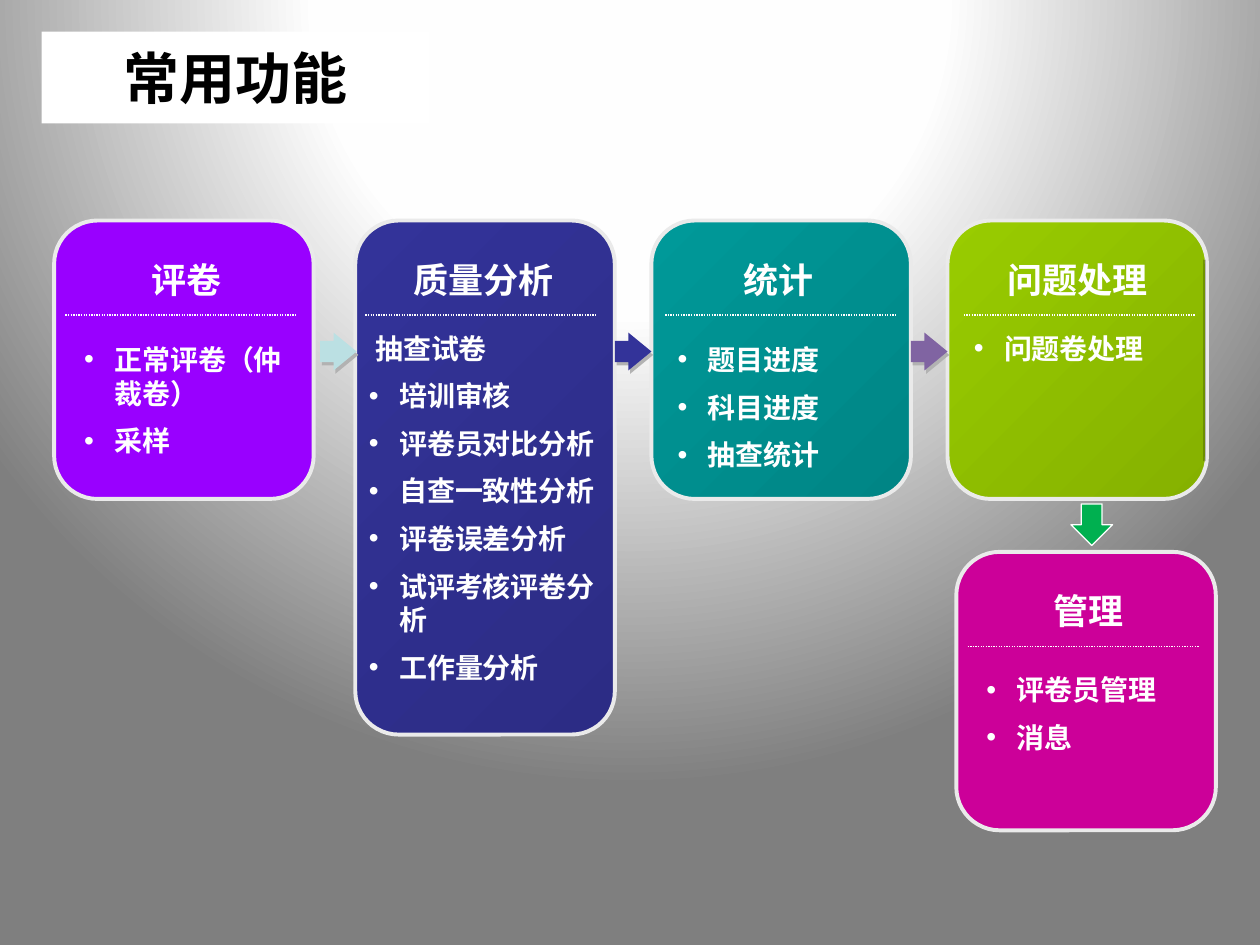
from dataclasses import dataclass

from lxml import etree
from pptx import Presentation
from pptx.dml.color import RGBColor
from pptx.enum import dml, shapes, text
from pptx.oxml import ns
from pptx.util import Inches, Pt

FONT = "Noto Sans CJK SC"
WHITE = RGBColor(0xFF, 0xFF, 0xFF)
BLACK = RGBColor(0, 0, 0)
BORDER = RGBColor(0xEA, 0xEA, 0xEA)
EDGE = RGBColor(0x08, 0x08, 0x08)
VIOLET = RGBColor(0x99, 0x00, 0xFF)
INDIGO = RGBColor(0x33, 0x33, 0x99)
TEAL = RGBColor(0x00, 0x99, 0x99)
LIME = RGBColor(0x99, 0xCC, 0x00)
MAGENTA = RGBColor(0xCC, 0x00, 0x99)
PALE_BLUE = RGBColor(0xBB, 0xE0, 0xE3)
PURPLE = RGBColor(0x80, 0x64, 0xA2)
GREEN = RGBColor(0x00, 0xB0, 0x50)

CARD_WIDTH = 2.06
RULE_WIDTH = 1.84
INDENT = 0.24


@dataclass(frozen=True)
class Card:
    heading: str
    items: tuple[str, ...]
    color: RGBColor
    left: float
    heading_left: float
    rule_left: float
    list_left: float
    list_drop: float = 0.92
    list_width: float = 1.82
    list_height: float = 1.04
    top: float = 1.75
    height: float = 2.21
    shaded: bool = True
    lead: str = ""


@dataclass(frozen=True)
class Step:
    left: float
    color: RGBColor


CARDS = (
    Card("评卷", ("正常评卷（仲裁卷）", "采样"), VIOLET,
         0.43, 0.45, 0.52, 0.57, shaded=False),
    Card("质量分析",
         ("培训审核", "评卷员对比分析", "自查一致性分析", "评卷误差分析",
          "试评考核评卷分析", "工作量分析"), INDIGO,
         2.82, 2.81, 2.90, 2.83, list_drop=0.83, list_width=2.09,
         list_height=2.79, height=4.08, lead="抽查试卷"),
    Card("统计", ("题目进度", "科目进度", "抽查统计"), TEAL,
         5.17, 5.15, 5.28, 5.28, list_height=1.18),
    Card("问题处理", ("问题卷处理",), LIME,
         7.52, 7.52, 7.65, 7.63, list_drop=0.83, list_height=0.37),
    Card("管理", ("评卷员管理", "消息"), MAGENTA,
         7.59, 7.61, 7.68, 7.73, list_drop=0.91, list_height=0.77,
         top=4.38, shaded=False),
)
STEPS = (Step(2.54, PALE_BLUE), Step(4.88, INDIGO), Step(7.23, PURPLE))


def add_xml(parent, tag: str, **attributes):
    return etree.SubElement(parent, ns.qn(tag), attributes)


def paint_background(slide) -> None:
    """Light falling from above the slide, fading to grey."""
    fill = slide.background.fill
    fill.gradient()
    gradient = slide.element.find(".//" + ns.qn("a:gradFill"))
    for child in list(gradient):
        gradient.remove(child)
    stops = add_xml(gradient, "a:gsLst")
    for position, color in ((0, "FFFFFF"), (40, "FEFEFE"), (100, "7F7F7F")):
        stop = add_xml(stops, "a:gs", pos=str(position * 1000))
        add_xml(stop, "a:srgbClr", val=color)
    circle = add_xml(gradient, "a:path", path="circle")
    add_xml(circle, "a:fillToRect", l="50000", t="-80000", r="50000", b="180000")


def shade_diagonally(shape, color: RGBColor) -> None:
    shape.fill.gradient()
    shape.fill.gradient_angle = 315
    for stop, position in zip(shape.fill.gradient_stops, (0, 1)):
        stop.color.rgb = color
        stop.position = position
    last = shape._element.spPr.findall(".//" + ns.qn("a:srgbClr"))[-1]
    add_xml(last, "a:shade", val="72549")


def add_filled(slide, kind, left: float, top: float, width: float,
               height: float, color: RGBColor):
    shape = slide.shapes.add_shape(
        kind, Inches(left), Inches(top), Inches(width), Inches(height))
    shape.shadow.inherit = False
    shape.fill.solid()
    shape.fill.fore_color.rgb = color
    shape.line.fill.background()
    return shape


def add_line(slide, start: tuple[float, float], end: tuple[float, float],
             color: RGBColor, width: float):
    line = slide.shapes.add_connector(
        shapes.MSO_CONNECTOR.STRAIGHT, *map(Inches, start + end))
    line.line.color.rgb = color
    line.line.width = Pt(width)
    add_xml(line._element.spPr, "a:effectLst")
    return line


def set_font(paragraph, size: float, color: RGBColor) -> None:
    for run in paragraph.runs:
        run.font.size = Pt(size)
        run.font.bold = True
        run.font.name = FONT
        run.font.color.rgb = color
        add_xml(run._r.get_or_add_rPr(), "a:ea", typeface=FONT)


def add_text(slide, left: float, top: float, width: float, height: float,
             lines: tuple[str, ...], size: float):
    box = slide.shapes.add_textbox(
        Inches(left), Inches(top), Inches(width), Inches(height))
    frame = box.text_frame
    frame.word_wrap = True
    frame.text = "\n".join(lines)
    for paragraph in frame.paragraphs:
        set_font(paragraph, size, WHITE)
    for paragraph in frame.paragraphs[1:]:
        paragraph.space_before = Pt(size / 2)
    return frame


def indent(paragraph, margin: float, bulleted: bool) -> None:
    properties = paragraph._p.get_or_add_pPr()
    properties.set("marL", str(Inches(margin)))
    if bulleted:
        properties.set("indent", str(-Inches(margin)))
        add_xml(properties, "a:buFont", typeface="Arial")
        add_xml(properties, "a:buChar", char="•")


def add_card(slide, card: Card) -> None:
    panel = add_filled(slide, shapes.MSO_SHAPE.ROUNDED_RECTANGLE, card.left,
                       card.top, CARD_WIDTH, card.height, card.color)
    if card.shaded:
        shade_diagonally(panel, card.color)
    panel.line.color.rgb = BORDER
    panel.line.width = Pt(2.25)

    heading = add_text(slide, card.heading_left, card.top + 0.25, CARD_WIDTH,
                       0.43, (card.heading,), 20)
    heading.paragraphs[0].alignment = text.PP_ALIGN.CENTER

    rule_top = card.top + 0.75
    rule = add_line(slide, (card.rule_left, rule_top),
                    (card.rule_left + RULE_WIDTH, rule_top), WHITE, 0.75)
    rule.line.dash_style = dml.MSO_LINE.ROUND_DOT

    lines = ((card.lead,) if card.lead else ()) + card.items
    functions = add_text(slide, card.list_left, card.top + card.list_drop,
                         card.list_width, card.list_height, lines, 16)
    for paragraph in functions.paragraphs:
        is_lead = paragraph.text == card.lead
        indent(paragraph, 0.05 if is_lead else INDENT, not is_lead)


def add_step(slide, step: Step) -> None:
    arrow = add_filled(slide, shapes.MSO_SHAPE.RIGHT_ARROW, step.left, 2.64,
                       0.29, 0.3, step.color)
    arrow.adjustments[0] = 0.56
    arrow.adjustments[1] = 0.63
    effects = arrow._element.spPr.find(ns.qn("a:effectLst"))
    shadow = add_xml(effects, "a:outerShdw", dist=str(Pt(2.2)),
                     dir=str(63 * 60000), algn="ctr", rotWithShape="0")
    add_xml(shadow, "a:srgbClr", val="B2B2B2")


def add_title(slide) -> None:
    title = slide.shapes.title
    title.left, title.top = Inches(0.33), Inches(0.25)
    title.width, title.height = Inches(3.08), Inches(0.73)
    title.fill.solid()
    title.fill.fore_color.rgb = WHITE
    title.text_frame.text = "常用功能"
    title.text_frame.vertical_anchor = text.MSO_ANCHOR.MIDDLE
    title.text_frame.paragraphs[0].alignment = text.PP_ALIGN.CENTER
    set_font(title.text_frame.paragraphs[0], 32, BLACK)


def main() -> None:
    deck = Presentation()
    deck.slide_width, deck.slide_height = Inches(10), Inches(7.5)
    slide = deck.slides.add_slide(deck.slide_layouts.get_by_name("Title Only"))
    paint_background(slide)
    add_title(slide)
    for card in CARDS:
        add_card(slide, card)
    edge = add_line(slide, (9.56, 2.06), (9.56, 3.66), EDGE, 1.5)
    edge_color = edge._element.spPr.find(".//" + ns.qn("a:srgbClr"))
    add_xml(edge_color, "a:alpha", val="22000")
    for step in STEPS:
        add_step(slide, step)
    down = add_filled(slide, shapes.MSO_SHAPE.DOWN_ARROW, 8.5, 4, 0.33, 0.33, GREEN)
    down.line.color.rgb = WHITE
    down.line.width = Pt(0.75)
    deck.save("out.pptx")


if __name__ == "__main__":
    main()
